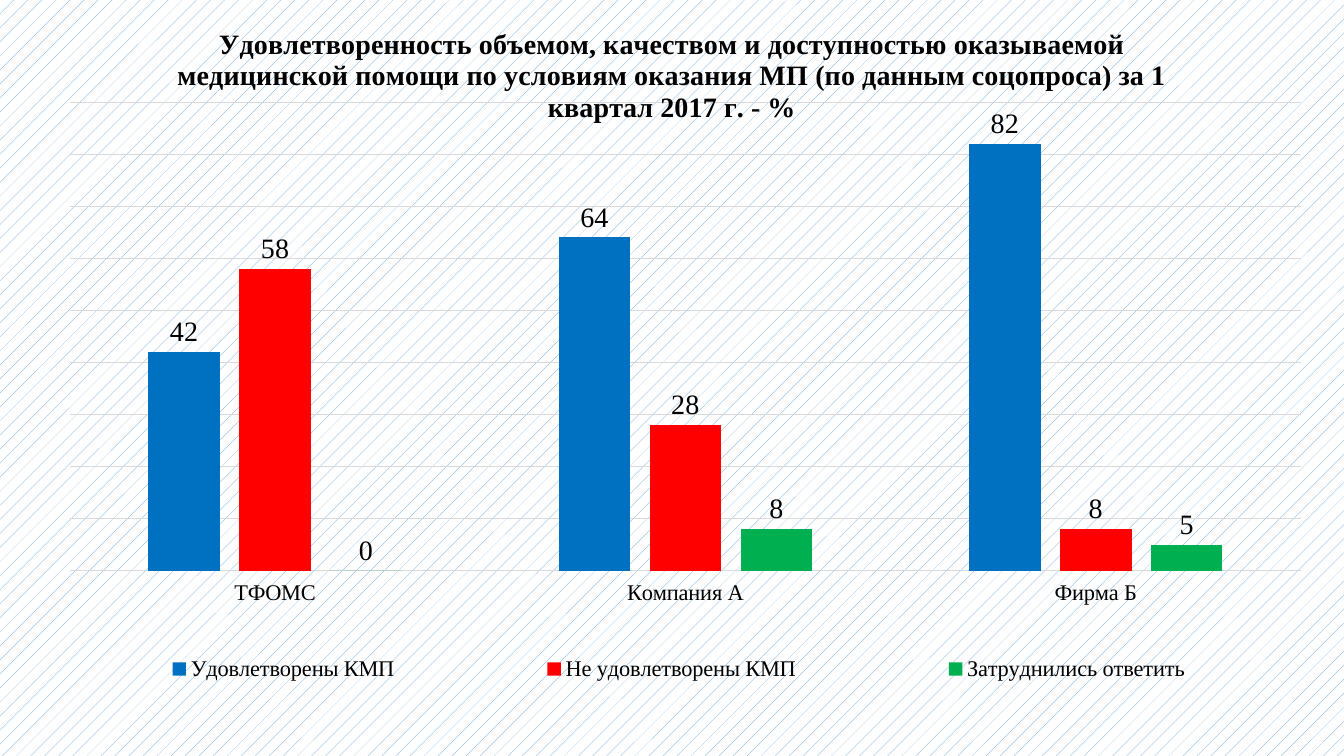
"""Build a slide with a clustered column chart of patient satisfaction by insurer."""
from dataclasses import dataclass

from lxml.etree import SubElement
from pptx import Presentation
from pptx.chart.data import CategoryChartData
from pptx.dml.color import RGBColor
from pptx.enum.chart import XL_CHART_TYPE as ChartType
from pptx.enum.chart import XL_LABEL_POSITION as LabelPosition
from pptx.enum.chart import XL_LEGEND_POSITION as LegendPosition
from pptx.enum.chart import XL_TICK_LABEL_POSITION as TickLabels
from pptx.enum.chart import XL_TICK_MARK as TickMark
from pptx.enum.dml import MSO_PATTERN as Pattern
from pptx.oxml.ns import qn
from pptx.util import Inches, Pt


@dataclass(frozen=True)
class Theme:
    font: str = "Times New Roman"
    base_font: str = "Calibri"
    base_size: int = 10
    small: int = 16
    large: int = 20
    text: str = "000000"
    grid: str = "D9D9D9"
    hatch: str = "5B9BD5"
    paper: str = "FFFFFF"
    satisfied: str = "0070C0"
    unsatisfied: str = "FF0000"
    undecided: str = "00B050"


theme = Theme()


def write(text, frame, size, color, name, bold=False):
    para = frame.paragraphs[0]
    span = para.add_run()
    span.text = text
    for font in (para.font, span.font):
        font.size, font.bold, font.name = Pt(size), bold, name
        font.color.rgb = RGBColor.from_string(color)


def place(layout, **settings):
    manual = SubElement(layout, qn("c:manualLayout"))
    for tag, value in settings.items():
        SubElement(manual, qn(f"c:{tag}")).set("val", str(value))


deck = Presentation()
deck.slide_width, deck.slide_height = Inches(13.33), Inches(7.5)
page = deck.slides.add_slide(deck.slide_layouts[6])
backdrop = page.background.fill
backdrop.patterned()
backdrop.pattern = Pattern.PERCENT_5
backdrop.fore_color.rgb = RGBColor.from_string(theme.hatch)
backdrop.back_color.rgb = RGBColor.from_string(theme.paper)

answers = [
    ("Удовлетворены КМП", (42, 64, 82), theme.satisfied),
    ("Не удовлетворены КМП", (58, 28, 8), theme.unsatisfied),
    ("Затруднились ответить", (0, 8, 5), theme.undecided),
]
data = CategoryChartData(number_format="#,##0")
data.categories = ["ТФОМС", "Компания А", "Фирма Б"]
for name, values, color in answers:
    data.add_series(name, values)
chart = page.shapes.add_chart(
    ChartType.COLUMN_CLUSTERED, 0, 0, deck.slide_width, deck.slide_height, data
).chart

write(
    "Удовлетворенность объемом, качеством и доступностью оказываемой "
    "медицинской помощи по условиям оказания МП (по данным соцопроса) "
    "за 1 квартал 2017 г. - %",
    frame=chart.chart_title.text_frame,
    size=theme.large, color=theme.text, name=theme.font, bold=True,
)

plot = chart.plots[0]
plot.gap_width, plot.overlap, plot.vary_by_categories = 219, -27, False
for series, (name, values, color) in zip(plot.series, answers):
    series.format.fill.solid()
    series.format.fill.fore_color.rgb = RGBColor.from_string(color)
    series.invert_if_negative = False
    labels = series.data_labels
    labels.show_value = True
    labels.position = LabelPosition.OUTSIDE_END
    labels.number_format, labels.number_format_is_linked = "#,##0", False

category_axis, value_axis = chart.category_axis, chart.value_axis
category_axis.major_tick_mark = TickMark.NONE
category_axis.tick_label_position = TickLabels.LOW
value_axis.visible = False
value_axis.minimum_scale, value_axis.maximum_scale, value_axis.major_unit = 0, 90, 10
value_axis.has_major_gridlines = True
for line in (category_axis.format.line, value_axis.major_gridlines.format.line):
    line.color.rgb = RGBColor.from_string(theme.grid)
    line.width = Pt(0.75)

chart.has_legend = True
legend = chart.legend
legend.position, legend.include_in_layout = LegendPosition.BOTTOM, False

styles = [
    (chart.font, theme.base_font, theme.base_size),
    (category_axis.tick_labels.font, theme.font, theme.small),
    (legend.font, theme.font, theme.small),
]
styles += [(series.data_labels.font, theme.font, theme.large) for series in plot.series]
for font, name, size in styles:
    font.name, font.size = name, Pt(size)
    font.color.rgb = RGBColor.from_string(theme.text)

area = chart.element.find(f".//{qn('c:plotArea')}")
area_layout = area.find(qn("c:layout"))
if area_layout is None:
    area_layout = SubElement(area, qn("c:layout"))
    area.insert(0, area_layout)
place(area_layout, layoutTarget="inner", xMode="edge", yMode="edge",
      x=0.052, y=0.135, w=0.916, h=0.62)

legend_box = chart.element.find(f".//{qn('c:legend')}")
legend_layout = legend_box.find(qn("c:layout"))
if legend_layout is None:
    legend_layout = SubElement(legend_box, qn("c:layout"))
    legend_box.find(qn("c:legendPos")).addnext(legend_layout)
place(legend_layout, xMode="edge", yMode="edge", x=0.02, y=0.84, w=0.97, h=0.09)

deck.save("out.pptx")
